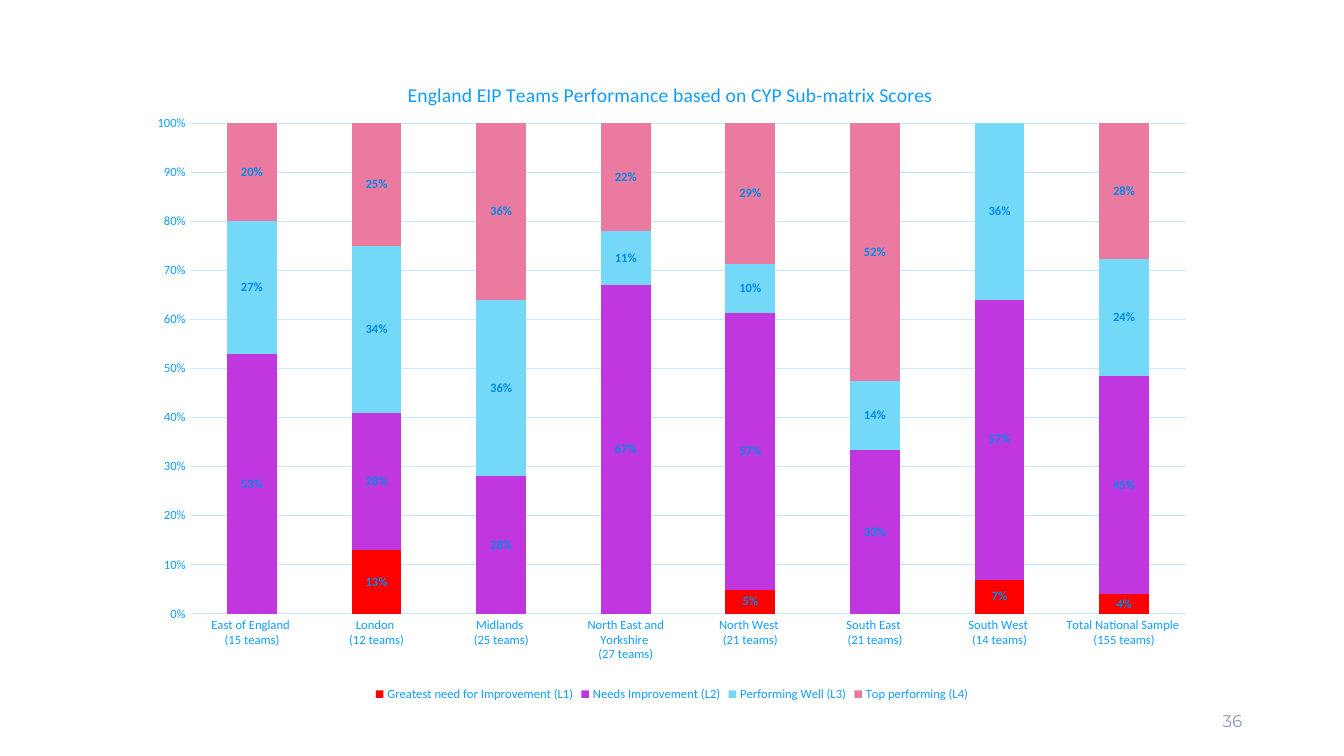
"""Build the slide charting EIP team performance by region."""
from dataclasses import dataclass
from typing import NamedTuple

from lxml import etree
from pptx import Presentation, util as u
from pptx.chart import data as chart_data
from pptx.dml.color import RGBColor
from pptx.enum import chart as ch, text as t
from pptx.oxml import ns

EMU_PER_PX = 9144


@dataclass(frozen=True)
class Theme:
    body_font: str = "Calibri"
    number_font: str = "Montserrat"
    axis_text: str = "109DFF"
    value_text: str = "008AEA"
    grid: str = "C8E8FF"
    page_number: str = "8C99B3"
    title_pt: int = 14
    chart_pt: int = 9
    page_pt: int = 12
    grid_pt: float = 0.75


class Region(NamedTuple):
    name: str
    teams: int
    shares: tuple[float, float, float, float]


class Level(NamedTuple):
    name: str
    color: str


class Box(NamedTuple):
    left: int
    top: int
    width: int
    height: int


THEME = Theme()
REGIONS = [
    Region("East of England", 15, (0, 0.53, 0.27, 0.20)),
    Region("London", 12, (0.13, 0.28, 0.34, 0.25)),
    Region("Midlands", 25, (0, 0.28, 0.36, 0.36)),
    Region("North East and Yorkshire", 27, (0, 0.67, 0.11, 0.22)),
    Region("North West", 21, (0.05, 0.57, 0.10, 0.29)),
    Region("South East", 21, (0, 0.33, 0.14, 0.52)),
    Region("South West", 14, (0.07, 0.57, 0.36, 0)),
    Region("Total National Sample", 155, (0.04, 0.45, 0.24, 0.28)),
]
LEVELS = [
    Level("Greatest need for Improvement (L1)", "FF0000"),
    Level("Needs Improvement (L2)", "C137DF"),
    Level("Performing Well (L3)", "74D9F9"),
    Level("Top performing (L4)", "EA7A9F"),
]


def px(length: int) -> u.Emu:
    return u.Emu(length * EMU_PER_PX)


def style_font(font, size: int, color: str, name: str = THEME.body_font, bold: bool = False) -> None:
    font.size = u.Pt(size)
    font.name = name
    font.bold = bold
    font.color.rgb = RGBColor.from_string(color)


def style_line(line) -> None:
    line.color.rgb = RGBColor.from_string(THEME.grid)
    line.width = u.Pt(THEME.grid_pt)


def set_layout(parent, index: int, **fractions: float) -> None:
    for previous in parent.findall(ns.qn("c:layout")):
        parent.remove(previous)
    layout = etree.Element(ns.qn("c:layout"))
    manual = etree.SubElement(layout, ns.qn("c:manualLayout"))
    settings = {"xMode": "edge", "yMode": "edge", **fractions}
    if "w" in fractions:
        settings = {"layoutTarget": "inner", **settings}
    for tag, value in settings.items():
        etree.SubElement(manual, ns.qn(f"c:{tag}")).set("val", str(value))
    parent.insert(index, layout)


def style_axes(chart) -> None:
    for axis in (chart.category_axis, chart.value_axis):
        axis.major_tick_mark = axis.minor_tick_mark = ch.XL_TICK_MARK.NONE
        style_font(axis.tick_labels.font, THEME.chart_pt, THEME.axis_text)
    style_line(chart.category_axis.format.line)
    shares = chart.value_axis
    shares.minimum_scale, shares.maximum_scale, shares.major_unit = 0, 1, 0.1
    shares.format.line.fill.background()
    style_line(shares.major_gridlines.format.line)
    shares.tick_labels.number_format = "0%"
    shares.tick_labels.number_format_is_linked = False


def style_bars(plot) -> None:
    plot.gap_width, plot.overlap = 150, 100
    plot.vary_by_categories = False
    for bars, level in zip(plot.series, LEVELS):
        bars.format.fill.solid()
        bars.format.fill.fore_color.rgb = RGBColor.from_string(level.color)
        bars.invert_if_negative = False
        labels = bars.data_labels
        labels.show_value = True
        labels.position = ch.XL_LABEL_POSITION.CENTER
        labels.number_format = "0%;;"
        labels.number_format_is_linked = False
        style_font(labels.font, THEME.chart_pt, THEME.value_text, bold=True)


def add_performance(slide, box: Box, title: str) -> None:
    scores = chart_data.CategoryChartData(number_format="0%")
    scores.categories = [f"{region.name} \n({region.teams} teams)" for region in REGIONS]
    for index, level in enumerate(LEVELS):
        scores.add_series(level.name, [region.shares[index] for region in REGIONS])
    chart = slide.shapes.add_chart(
        ch.XL_CHART_TYPE.COLUMN_STACKED_100, *map(px, box), scores
    ).chart
    style_font(chart.font, THEME.chart_pt, THEME.axis_text)
    chart.has_title = True
    heading = chart.chart_title
    heading.text_frame.text = title
    style_font(heading.text_frame.paragraphs[0].runs[0].font, THEME.title_pt, THEME.axis_text)
    heading.include_in_layout = False
    set_layout(heading._element, 1, x=0.25, y=0.04)
    chart.has_legend = True
    chart.legend.position = ch.XL_LEGEND_POSITION.BOTTOM
    chart.legend.include_in_layout = False
    style_font(chart.legend.font, THEME.chart_pt, THEME.axis_text)
    style_axes(chart)
    style_bars(chart.plots[0])
    plot_area = chart._chartSpace.find(f".//{ns.qn('c:plotArea')}")
    set_layout(plot_area, 0, x=0.05, y=0.11, w=0.93, h=0.75)


def add_page_number(slide, box: Box, number: str) -> None:
    frame = slide.shapes.add_textbox(*map(px, box)).text_frame
    frame.word_wrap = True
    frame.vertical_anchor = t.MSO_ANCHOR.MIDDLE
    frame.text = number
    line = frame.paragraphs[0]
    line.alignment = t.PP_ALIGN.RIGHT
    style_font(line.runs[0].font, THEME.page_pt, THEME.page_number, THEME.number_font)


def main() -> None:
    deck = Presentation()
    deck.slide_width, deck.slide_height = px(1333), px(750)
    slide = deck.slides.add_slide(deck.slide_layouts.get_by_name("Blank"))
    add_page_number(slide, Box(942, 695, 300, 40), "36")
    add_performance(
        slide,
        Box(135, 51, 1063, 649),
        "England EIP Teams Performance based on CYP Sub-matrix Scores",
    )
    deck.save("out.pptx")


if __name__ == "__main__":
    main()
